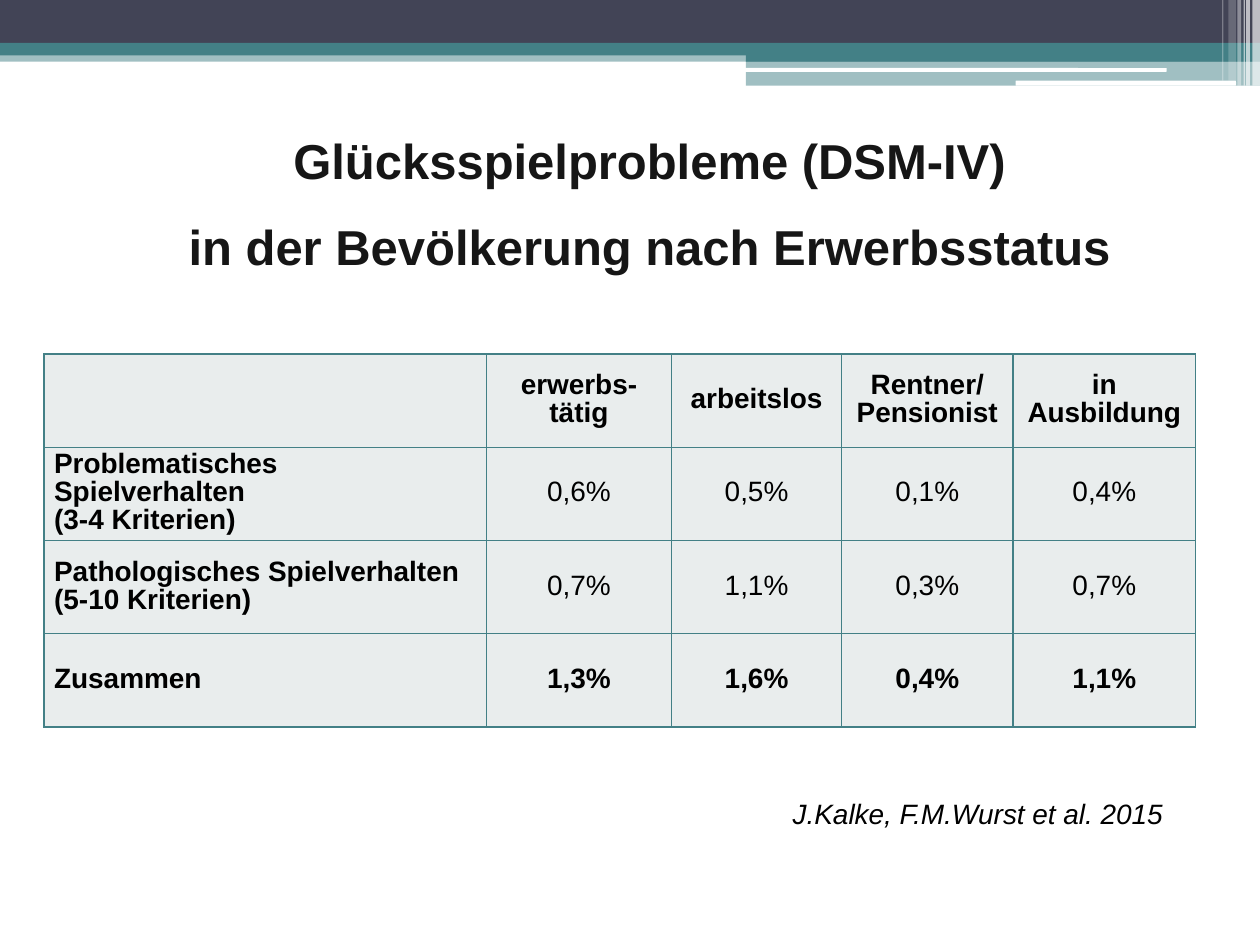
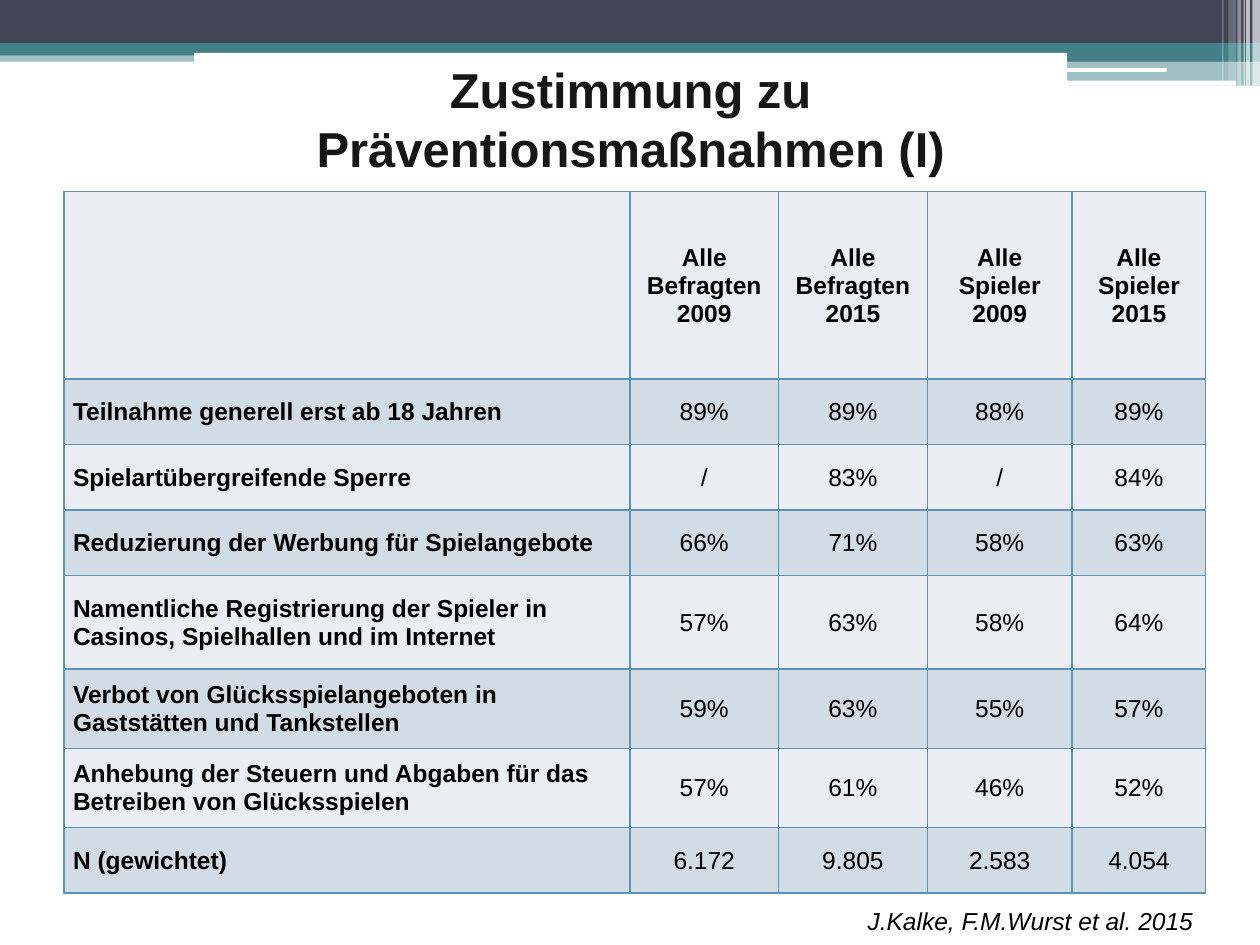
from lxml import etree
from pptx import Presentation
from pptx.dml.color import RGBColor
from pptx.enum.shapes import MSO_SHAPE
from pptx.enum.text import MSO_ANCHOR, MSO_AUTO_SIZE, PP_ALIGN
from pptx.oxml.ns import qn
from pptx.util import Inches, Pt

RECT, ROUNDED = MSO_SHAPE.RECTANGLE, MSO_SHAPE.ROUNDED_RECTANGLE
LEFT, CENTER, RIGHT = PP_ALIGN.LEFT, PP_ALIGN.CENTER, PP_ALIGN.RIGHT
MIDDLE, NO_AUTOFIT = MSO_ANCHOR.MIDDLE, MSO_AUTO_SIZE.NONE
TITLE_ONLY = 5

FONT = "Arial"
WHITE, BLACK, TITLE_INK = "FFFFFF", "000000", "161616"
SLATE, TEAL, BLUE = "424456", "438086", "5C92B5"
TEAL_TINT, BLUE_LIGHT, BLUE_MID = "E9EDED", "EAEEF3", "D2DCE5"
CREDIT = "J.Kalke, F.M.Wurst et al. 2015"

# shape, left, top, width, height, colour, opacity in percent
BANDS = [
    (RECT, 0, 0.4, 10, 0.09, TEAL, 50),
    (RECT, 0, 0, 10, 0.34, SLATE, 100),
    (RECT, 0, 0.34, 10, 0.1, TEAL, 100),
    (RECT, 5.92, 0.39, 4.08, 0.1, TEAL, 100),
    (RECT, 5.92, 0.48, 4.08, 0.2, TEAL, 50),
    (ROUNDED, 5.91, 0.54, 3.35, 0.03, WHITE, 100),
    (ROUNDED, 8.06, 0.64, 1.75, 0.04, WHITE, 100),
    (RECT, 9.94, 0, 0.06, 0.68, WHITE, 65),
    (RECT, 9.89, 0, 0.03, 0.68, WHITE, 65),
    (RECT, 9.87, 0, 0.01, 0.68, WHITE, 60),
    (RECT, 9.82, 0, 0.03, 0.68, WHITE, 40),
    (RECT, 9.75, 0, 0.06, 0.64, WHITE, 20),
    (RECT, 9.7, 0, 0.01, 0.64, WHITE, 30),
]

STATUS_ROWS = [
    ["", "erwerbs-tätig", "arbeitslos", "Rentner/ Pensionist", "in Ausbildung"],
    ["Problematisches Spielverhalten\n(3-4 Kriterien)", "0,6%", "0,5%", "0,1%", "0,4%"],
    ["Pathologisches Spielverhalten\n(5-10 Kriterien)", "0,7%", "1,1%", "0,3%", "0,7%"],
    ["Zusammen", "1,3%", "1,6%", "0,4%", "1,1%"],
]

# \v is a line break inside a paragraph
MEASURE_ROWS = [
    ["", "Alle\vBefragten 2009", "Alle\vBefragten 2015",
     "Alle\vSpieler 2009", "Alle\vSpieler 2015"],
    ["Teilnahme generell erst ab 18 Jahren", "89%", "89%", "88%", "89%"],
    ["Spielartübergreifende Sperre", "/", "83%", "/", "84%"],
    ["Reduzierung der Werbung für Spielangebote", "66%", "71%", "58%", "63%"],
    ["Namentliche Registrierung der Spieler in Casinos, Spielhallen und im Internet",
     "57%", "63%", "58%", "64%"],
    ["Verbot von Glücksspielangeboten in Gaststätten und Tankstellen",
     "59%", "63%", "55%", "57%"],
    ["Anhebung der Steuern und Abgaben für das Betreiben von Glücksspielen",
     "57%", "61%", "46%", "52%"],
    ["N (gewichtet)", "6.172", "9.805", "2.583", "4.054"],
]


def rgb(color):
    return RGBColor.from_string(color)


def paint(target, color):
    target.fill.solid()
    target.fill.fore_color.rgb = rgb(color)


def add_borders(cell, color):
    properties = cell._tc.get_or_add_tcPr()
    for index, side in enumerate(("lnL", "lnR", "lnT", "lnB")):
        line = etree.Element(qn(f"a:{side}"), w=str(Pt(1)))
        fill = etree.SubElement(line, qn("a:solidFill"))
        etree.SubElement(fill, qn("a:srgbClr"), val=color)
        properties.insert(index, line)


class SlideBuilder:
    def __init__(self):
        self.deck = Presentation()
        self.deck.slide_width, self.deck.slide_height = Inches(10), Inches(7.5)
        self.layout = self.deck.slide_layouts[TITLE_ONLY]
        self.page = None

    def start_page(self):
        first = self.page is None
        self.page = self.deck.slides.add_slide(self.layout)
        if first:
            self.share_bands()

    def share_bands(self):
        """Draw the bands once and place them in the layout, behind its placeholders."""
        tree = self.layout.shapes.element
        for index, band in enumerate([self.band(*row) for row in BANDS]):
            band.element.nvSpPr.cNvPr.id = 100 + index
            tree.insert(2 + index, band.element)

    def band(self, kind, left, top, width, height, color, opacity):
        shape = self.page.shapes.add_shape(
            kind, Inches(left), Inches(top), Inches(width), Inches(height))
        shape.shadow.inherit = False
        shape.line.fill.background()
        paint(shape, color)
        if opacity < 100:
            tint = shape.element.spPr.find(f".//{qn('a:srgbClr')}")
            etree.SubElement(tint, qn("a:alpha"), val=str(opacity * 1000))
        return shape

    def set_text(self, frame, text, size, align, color=BLACK, bold=False, italic=False,
                 line_spacing=None, space_before=0):
        for index, line in enumerate(text.split("\n")):
            para = frame.paragraphs[0] if index == 0 else frame.add_paragraph()
            para.text = line
            para.alignment = align
            para.line_spacing = line_spacing
            para.space_before = Pt(space_before)
            font = para.font
            font.name, font.size = FONT, Pt(size)
            font.bold, font.italic = bold, italic
            font.color.rgb = rgb(color)

    def title(self, text, left, top, width, height):
        box = self.page.shapes.title
        box.left, box.top = Inches(left), Inches(top)
        box.width, box.height = Inches(width), Inches(height)
        paint(box, WHITE)
        frame = box.text_frame
        frame.word_wrap, frame.auto_size = True, NO_AUTOFIT
        frame.vertical_anchor = MIDDLE
        self.set_text(frame, text, 28, CENTER, TITLE_INK, bold=True, space_before=16)

    def table(self, rows, left, top, widths, heights, size, margin, border, fills,
              bold_rows=(0,)):
        """Fill a table whose row colours cycle through fills."""
        frame = self.page.shapes.add_table(
            len(rows), len(widths), Inches(left), Inches(top),
            Inches(sum(widths)), Inches(sum(heights)))
        table = frame.table
        table.first_row = table.horz_banding = False
        for column, width in zip(table.columns, widths):
            column.width = Inches(width)
        for row, height in zip(table.rows, heights):
            row.height = Inches(height)
        for row_index, texts in enumerate(rows):
            for column_index, text in enumerate(texts):
                cell = table.cell(row_index, column_index)
                cell.margin_left = cell.margin_right = Inches(margin)
                cell.margin_top = cell.margin_bottom = 0
                cell.vertical_anchor = MIDDLE
                paint(cell, fills[row_index % len(fills)])
                add_borders(cell, border)
                is_label = column_index == 0
                self.set_text(cell.text_frame, text, size, LEFT if is_label else CENTER,
                              bold=is_label or row_index in bold_rows, line_spacing=Pt(16))

    def credit(self, left, top, height, size):
        box = self.page.shapes.add_textbox(
            Inches(left), Inches(top), Inches(4.33), Inches(height))
        box.text_frame.word_wrap = True
        self.set_text(box.text_frame, CREDIT, size, RIGHT, italic=True)


def main():
    builder = SlideBuilder()

    builder.start_page()
    builder.title("Glücksspielprobleme (DSM-IV)\nin der Bevölkerung nach Erwerbsstatus",
                  1.14, 0.97, 8.03, 1.28)
    builder.table(STATUS_ROWS, 0.35, 2.81, [3.51, 1.47, 1.35, 1.36, 1.45], [0.74] * 4,
                  16, 0.08, TEAL, [TEAL_TINT], bold_rows=(0, 3))
    builder.credit(5, 6.27, 0.37, 16)

    builder.start_page()
    builder.title("Zustimmung zu Präventionsmaßnahmen (I)", 1.54, 0.42, 6.93, 1.04)
    builder.table(MEASURE_ROWS, 0.51, 1.52, [4.49, 1.18, 1.18, 1.15, 1.06],
                  [1.49, 0.52, 0.52, 0.52, 0.74, 0.63, 0.63, 0.52],
                  14, 0.07, BLUE, [BLUE_LIGHT, BLUE_MID])
    builder.credit(5.24, 7.14, 0.34, 14)

    builder.deck.save("out.pptx")


if __name__ == "__main__":
    main()
